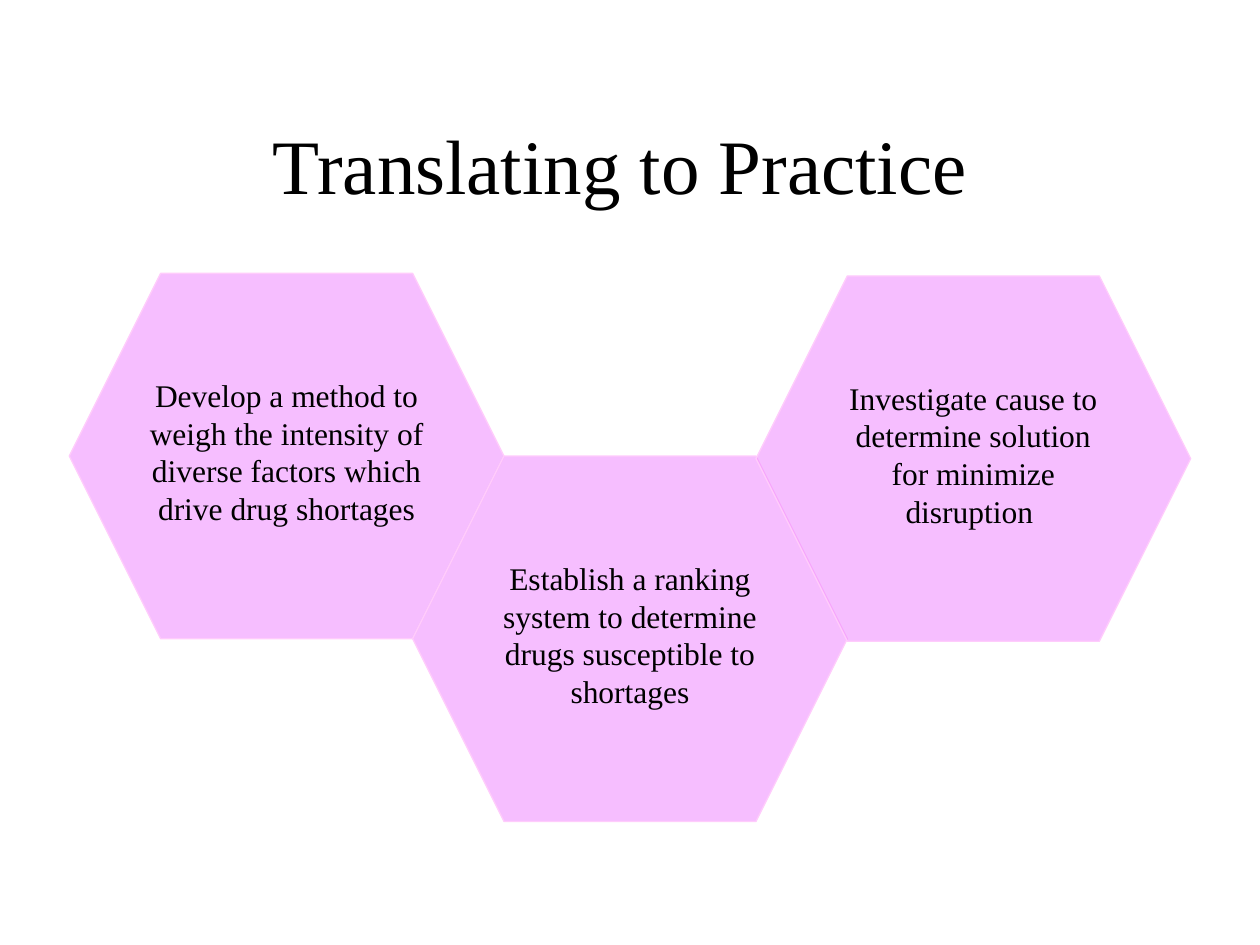
from dataclasses import dataclass

from lxml import etree
from pptx import Presentation
from pptx.dml.color import RGBColor
from pptx.enum.shapes import MSO_SHAPE
from pptx.enum.text import MSO_ANCHOR, PP_ALIGN
from pptx.oxml.ns import qn
from pptx.util import Inches, Pt


@dataclass(frozen=True)
class Theme:
    font: str = "Times New Roman"
    text: RGBColor = RGBColor(0x00, 0x00, 0x00)
    fill: RGBColor = RGBColor(0xEE, 0x7F, 0xFF)
    fill_alpha: int = 50
    line: RGBColor = RGBColor(0xFF, 0xCC, 0xFC)
    title_size: Pt = Pt(44)
    body_size: Pt = Pt(18)
    body_leading: Pt = Pt(21.5)


theme = Theme()


def set_text(shape, text, size):
    """Put one centred paragraph in the middle of a shape."""
    tf = shape.text_frame
    tf.word_wrap = True
    tf.vertical_anchor = MSO_ANCHOR.MIDDLE
    tf.text = text
    p = tf.paragraphs[0]
    p.alignment = PP_ALIGN.CENTER
    font = p.runs[0].font
    font.name, font.size = theme.font, size
    font.color.rgb = theme.text
    return tf


prs = Presentation()
prs.slide_width, prs.slide_height = Inches(10), Inches(7.5)
s = prs.slides.add_slide(prs.slide_layouts[6])

# Title
title = s.shapes.add_textbox(Inches(0.75), Inches(0.67), Inches(8.5), Inches(1.25))
set_text(title, "Translating to Practice ", theme.title_size)

# Interlocking hexagons: evenly spaced, the middle one half a height lower
HEX_W, HEX_H = 3.45, 2.9
LEFT, STEP = 0.55, 2.725
steps = [
    (2.17, "Develop a method to weigh the intensity of diverse factors which drive drug shortages"),
    (3.62, "Establish a ranking system to determine drugs susceptible to shortages"),
    (2.19, "Investigate cause to determine solution for minimize disruption "),
]
for i, (top, text) in enumerate(steps):
    sp = s.shapes.add_shape(MSO_SHAPE.HEXAGON, Inches(LEFT + i * STEP), Inches(top),
                            Inches(HEX_W), Inches(HEX_H))
    sp.shadow.inherit = False
    sp.fill.solid()
    sp.fill.fore_color.rgb = theme.fill
    sp.line.color.rgb = theme.line
    sp.line.width = Pt(0.75)

    # Translucent fill
    color = sp.fill._xPr.find(qn("a:solidFill"))[0]
    etree.SubElement(color, qn("a:alpha")).set("val", str(theme.fill_alpha * 1000))

    # Text sits slightly above the centre
    tf = set_text(sp, text, theme.body_size)
    tf.margin_bottom = Inches(0.12)
    tf.paragraphs[0].line_spacing = theme.body_leading

prs.save("out.pptx")
